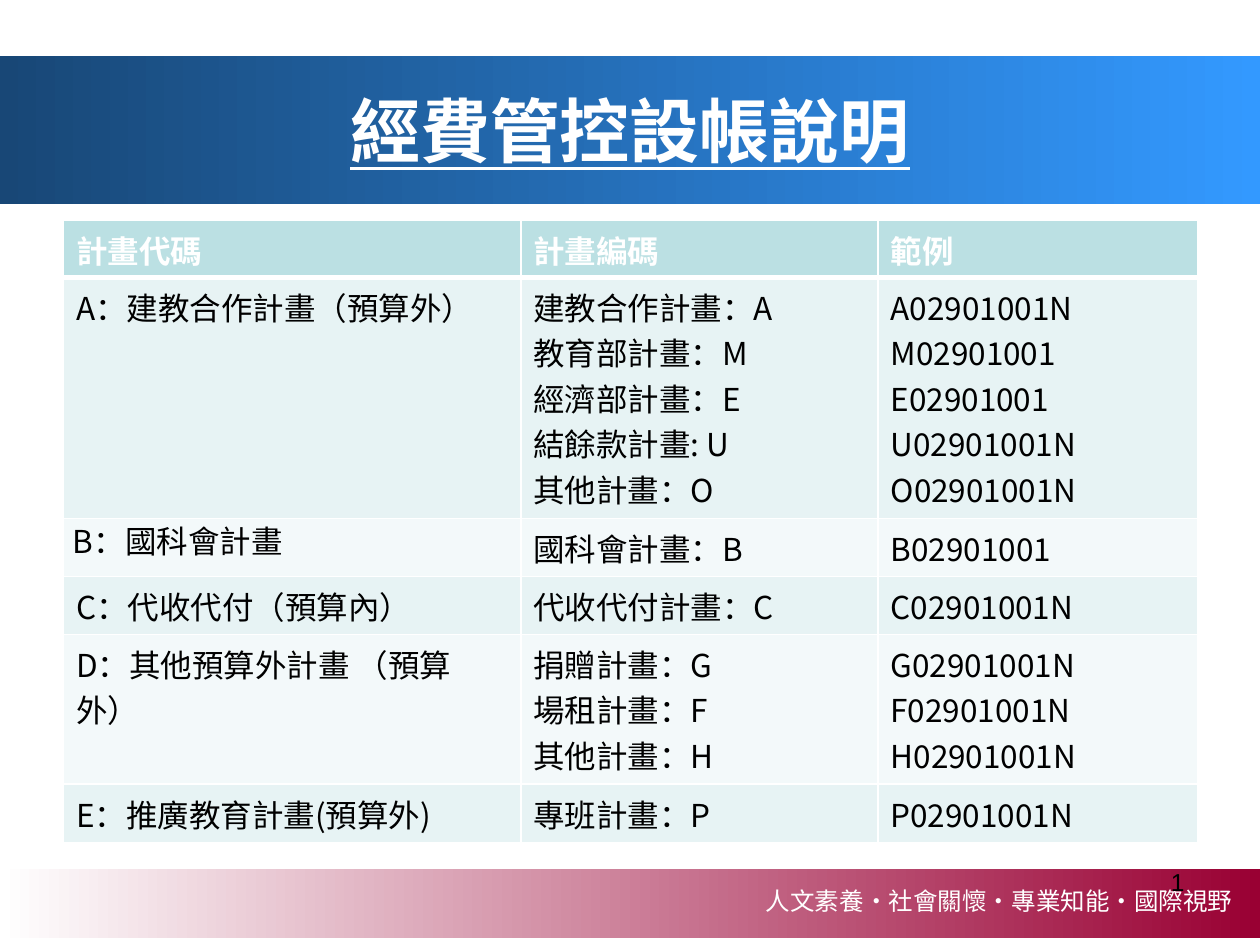
import pptx
import pptx.dml.color
import pptx.enum.shapes
import pptx.enum.text
import pptx.oxml
import pptx.oxml.ns
import pptx.util
from pptx.util import Cm

COLORS = {
    "white": "FFFFFF", "black": "000000", "navy": "184776", "sky": "3399FF",
    "crimson": "990033", "header": "BBE0E3", "odd": "E7F3F4", "even": "F3F9FA",
}
LATIN = "Arial"
CJK = "Noto Sans CJK SC"
HEADERS = ["計畫代碼", "計畫編碼", "範例"]
PLANS = [
    ("A：建教合作計畫（預算外）",
     "建教合作計畫：A\n教育部計畫：M\n經濟部計畫：E\n結餘款計畫: U\n其他計畫：O",
     "A02901001N\nM02901001\nE02901001\nU02901001N\nO02901001N"),
    ("B：國科會計畫", "國科會計畫：B", "B02901001"),
    ("C：代收代付（預算內）", "代收代付計畫：C", "C02901001N"),
    ("D：其他預算外計畫 （預算外）",
     "捐贈計畫：G\n場租計畫：F\n其他計畫：H",
     "G02901001N\nF02901001N\nH02901001N"),
    ("E：推廣教育計畫(預算外)", "專班計畫：P", "P02901001N"),
]
COLUMN_WIDTHS = [9.22, 7.2, 6.44]
ROW_HEIGHTS = [1.14, 4.86, 1.17, 1.17, 3.02, 1.17]
MOTTO = ["人文素養", "社會關懷", "專業知能", "國際視野"]


def rgb(name):
    return pptx.dml.color.RGBColor.from_string(COLORS[name])


def format_run(run, size, color, font, bold=False, underline=False):
    run.font.size = pptx.util.Pt(size)
    run.font.name = font
    run.font.bold = bold
    run.font.underline = underline
    run.font.color.rgb = rgb(color)
    east_asian = pptx.oxml.parse_xml(
        f'<a:ea {pptx.oxml.ns.nsdecls("a")} typeface="{CJK}"/>')
    run.font._element.find(pptx.oxml.ns.qn("a:latin")).addnext(east_asian)


def add_band(slide, top, height, start, end):
    band = slide.shapes.add_shape(
        pptx.enum.shapes.MSO_SHAPE.RECTANGLE, 0, Cm(top), Cm(25.4), Cm(height))
    band.shadow.inherit = False
    band.line.fill.background()
    band.fill.gradient()
    band.fill.gradient_angle = 0
    for stop, position, color in zip(band.fill.gradient_stops, (0, 1), (start, end)):
        stop.position = position
        stop.color.rgb = rgb(color)
    return band


def add_label(slide, left, top, width, height):
    label = slide.shapes.add_textbox(Cm(left), Cm(top), Cm(width), Cm(height))
    label.text_frame.word_wrap = True
    return label.text_frame.paragraphs[0]


def add_title(slide):
    frame = add_band(slide, 1.12, 3, "navy", "sky").text_frame
    frame.text = "經費管控設帳說明"
    frame.vertical_anchor = pptx.enum.text.MSO_ANCHOR.MIDDLE
    heading = frame.paragraphs[0]
    heading.alignment = pptx.enum.text.PP_ALIGN.CENTER
    format_run(heading.runs[0], 40, "white", CJK, bold=True, underline=True)


def add_footer(slide):
    add_band(slide, 17.52, 1.4, "white", "crimson")
    motto = add_label(slide, 15.19, 17.73, 10.21, 0.84)
    for index, phrase in enumerate(MOTTO):
        parts = [(phrase, LATIN)] if index == 0 else [("‧", CJK), (phrase, LATIN)]
        for text, font in parts:
            run = motto.add_run()
            run.text = text
            format_run(run, 14, "white", font)
    page = add_label(slide, 18.21, 17.35, 5.92, 1.32)
    page.text = "1"
    page.alignment = pptx.enum.text.PP_ALIGN.RIGHT
    format_run(page.runs[0], 14, "black", LATIN)


def set_borders(cell, bottom_width):
    properties = cell._tc.get_or_add_tcPr()
    for index, side in enumerate("LRTB"):
        width = pptx.util.Pt(bottom_width if side == "B" else 1)
        properties.insert(index, pptx.oxml.parse_xml(
            f'<a:ln{side} {pptx.oxml.ns.nsdecls("a")} w="{width}"><a:solidFill>'
            f'<a:srgbClr val="{COLORS["white"]}"/></a:solidFill></a:ln{side}>'))


def fill_cell(cell, text, fill, color, font, bold, bottom_width):
    cell.text_frame.text = text
    cell.fill.solid()
    cell.fill.fore_color.rgb = rgb(fill)
    set_borders(cell, bottom_width)
    for paragraph in cell.text_frame.paragraphs:
        format_run(paragraph.runs[0], 18, color, font, bold)


def add_plan_table(slide):
    table = slide.shapes.add_table(
        len(ROW_HEIGHTS), len(COLUMN_WIDTHS), Cm(1.28), Cm(4.45),
        Cm(sum(COLUMN_WIDTHS)), Cm(sum(ROW_HEIGHTS))).table
    for column, width in zip(table.columns, COLUMN_WIDTHS):
        column.width = Cm(width)
    for row, height in zip(table.rows, ROW_HEIGHTS):
        row.height = Cm(height)
    for column, text in enumerate(HEADERS):
        fill_cell(table.cell(0, column), text, "header", "white", LATIN, True, 3)
    for row, plan in enumerate(PLANS, start=1):
        for column, text in enumerate(plan):
            fill_cell(table.cell(row, column), text, "odd" if row % 2 else "even",
                      "black", CJK, False, 1)
    council = table.cell(2, 0)
    council.margin_left = council.margin_right = Cm(0.19)
    council.margin_top = council.margin_bottom = 0
    council.text_frame.paragraphs[0].line_spacing = pptx.util.Pt(25)


def main():
    deck = pptx.Presentation()
    deck.slide_width = Cm(25.4)
    deck.slide_height = Cm(19.05)
    slide = deck.slides.add_slide(deck.slide_layouts[6])
    add_footer(slide)
    add_title(slide)
    add_plan_table(slide)
    deck.save("out.pptx")


if __name__ == "__main__":
    main()
